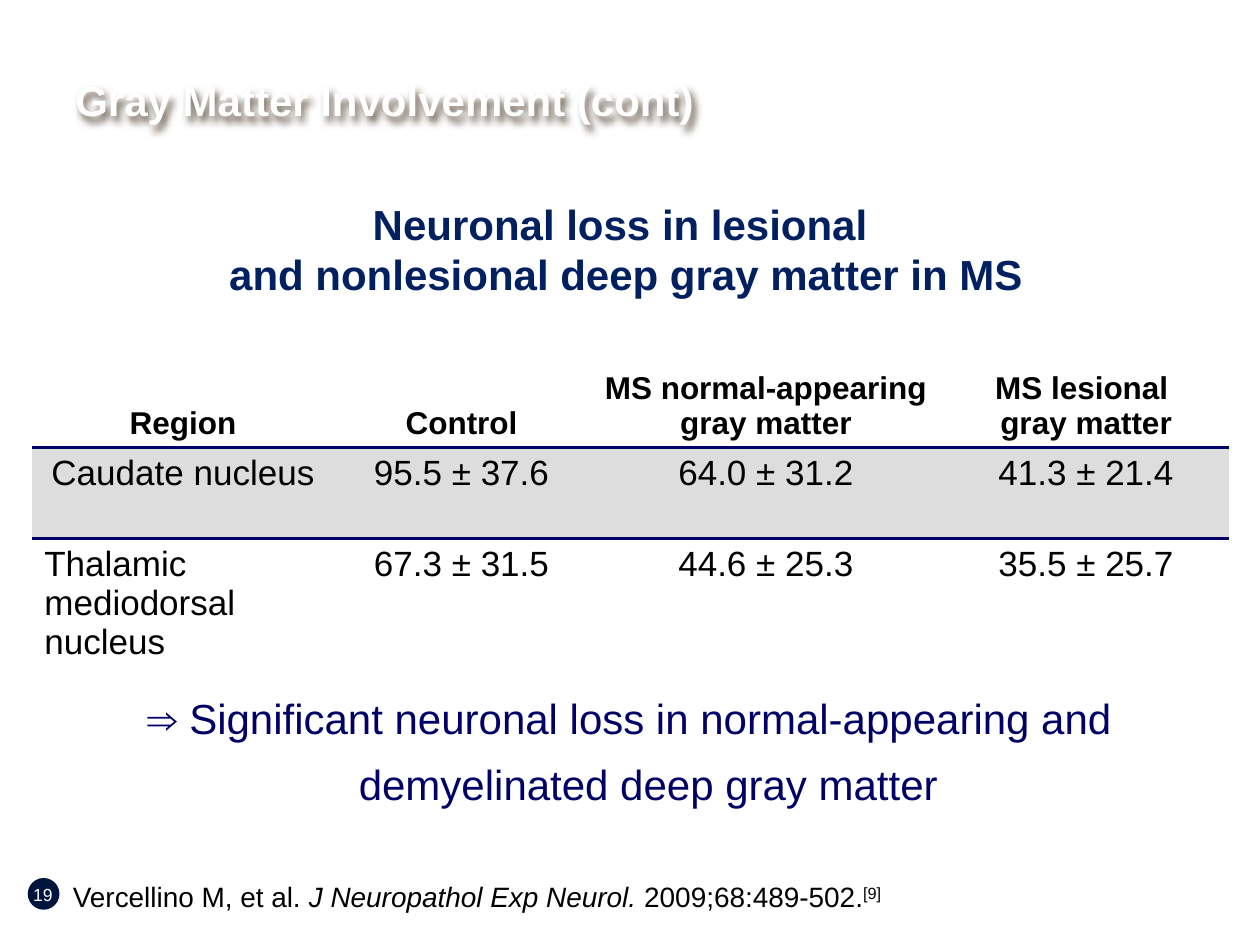
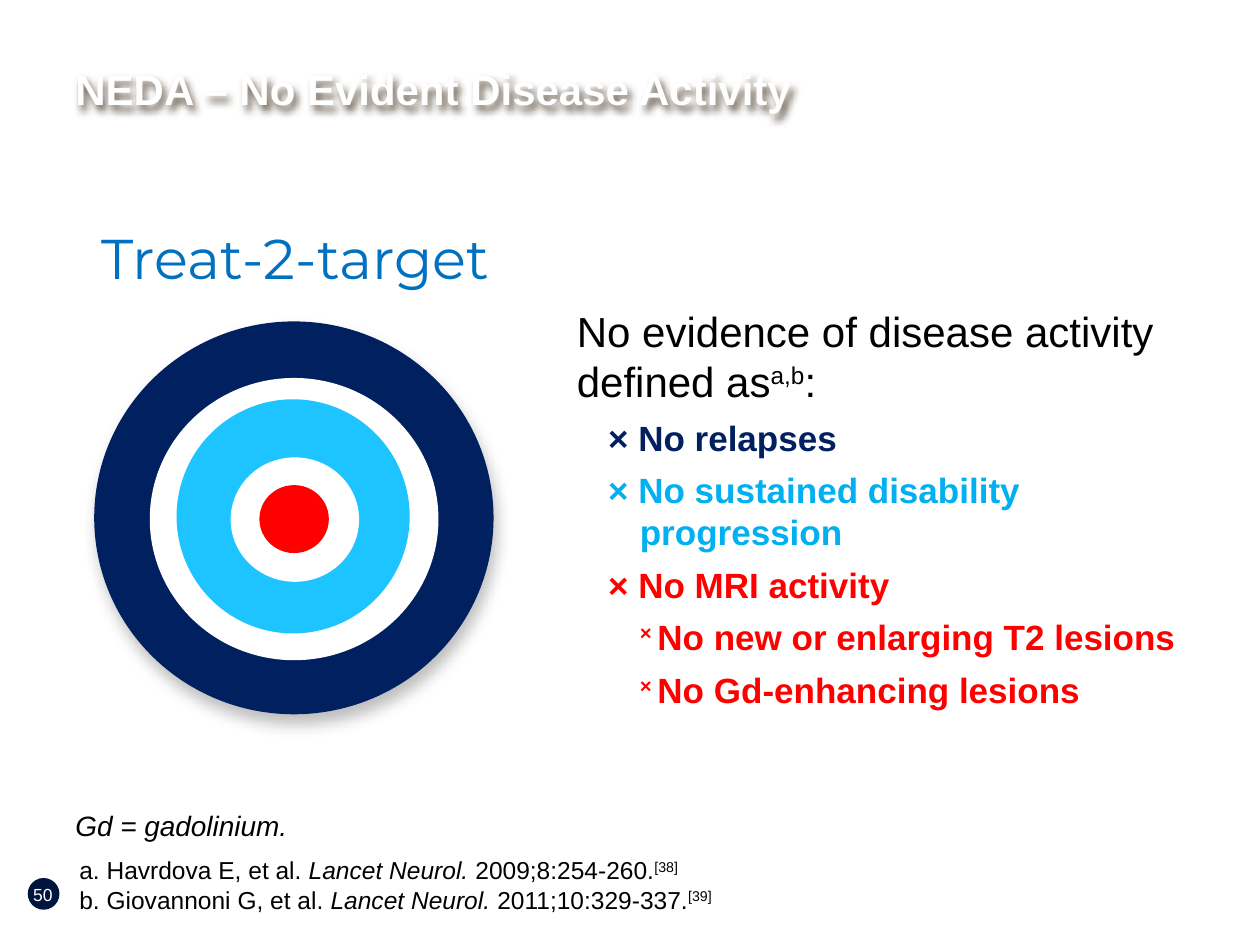
import pptx
import pptx.dml.color
import pptx.enum.shapes
import pptx.enum.text
import pptx.util
from lxml import etree
from pptx.oxml.ns import qn

Cm = pptx.util.Cm
Pt = pptx.util.Pt
ALIGN = pptx.enum.text.PP_ALIGN
ANCHOR = pptx.enum.text.MSO_ANCHOR
OVAL = pptx.enum.shapes.MSO_SHAPE.OVAL

COLORS = {
    "white": "FFFFFF",
    "black": "000000",
    "badge": "00153E",
    "navy": "002060",
    "rule": "000066",
    "band": "DDDDDD",
    "blue": "0070C0",
    "sky": "00B0F0",
    "ring": "1DC4FF",
    "red": "FF0000",
    "title shadow": "4A3A2A",
}
NO_STYLE_TABLE = "{2D5ABB26-0587-4C30-8999-92F81FD0307C}"

GRAY_MATTER = {
    "number": "19",
    "title": "Gray Matter Involvement (cont)",
    "title top": 0.43,
    "heading": "Neuronal loss in lesional \nand nonlesional deep gray matter in MS",
    "rows": [
        ["Region", "Control", "MS normal-appearing gray matter", "MS lesional \ngray matter"],
        ["Caudate nucleus", "95.5 ± 37.6", "64.0 ± 31.2", "41.3 ± 21.4"],
        ["Thalamic mediodorsal nucleus", "67.3 ± 31.5", "44.6 ± 25.3", "35.5 ± 25.7"],
    ],
    "column widths": [6.1, 5.13, 7.14, 5.77],
    "conclusion": "⇒ Significant neuronal loss in normal-appearing and demyelinated deep gray matter",
    "citation": [
        ("Vercellino M, et al. ", ""),
        ("J Neuropathol Exp Neurol. ", "italic"),
        ("2009;68:489-502.", ""),
        ("[9]", "superscript"),
    ],
}

NEDA = {
    "number": "50",
    "title": "NEDA – No Evident Disease Activity",
    "title top": 0.2,
    "heading": "Treat-2-target",
    "definition": [
        ("No evidence of disease activity defined as", ""),
        ("a,b", "superscript"),
        (":", ""),
    ],
    "criteria": [
        ("No relapses", "navy", 1),
        ("No sustained disability progression", "sky", 1),
        ("No MRI activity", "red", 1),
        ("No new or enlarging T2 lesions", "red", 2),
        ("No Gd-enhancing lesions", "red", 2),
    ],
    "rings": [
        ((1.9, 6.48, 8.05, 7.92), "navy"),
        ((3.02, 7.62, 5.82, 5.69), "white"),
        ((3.56, 8.05, 4.7, 4.72), "ring"),
        ((4.65, 9.22, 2.59, 2.51), "white"),
        ((5.23, 9.78, 1.4, 1.37), "red"),
    ],
    "abbreviation": "Gd = gadolinium.",
    "citations": [
        [
            ("a. Havrdova E, et al. ", ""),
            ("Lancet Neurol. ", "italic"),
            ("2009;8:254-260.", ""),
            ("[38]", "superscript"),
        ],
        [
            ("b. Giovannoni G, et al.", ""),
            (" Lancet Neurol. ", "italic"),
            ("2011;10:329-337.", ""),
            ("[39]", "superscript"),
        ],
    ],
}


def rgb(name):
    return pptx.dml.color.RGBColor.from_string(COLORS[name])


def place(box):
    return [Cm(length) for length in box]


def add_shadow(shape, color, alpha, blur, distance, angle):
    shape.shadow.inherit = False
    effects = shape._element.spPr.find(qn("a:effectLst"))
    shadow = etree.SubElement(
        effects, qn("a:outerShdw"), blurRad=str(Pt(blur)), dist=str(Pt(distance)),
        dir=str(angle * 60000), algn="ctr", rotWithShape="0")
    shade = etree.SubElement(shadow, qn("a:srgbClr"), val=COLORS[color])
    etree.SubElement(shade, qn("a:alpha"), val=str(alpha * 1000))


def write(paragraph, content, size, color="black", bold=False, align=ALIGN.LEFT,
          font="Arial"):
    if isinstance(content, str):
        paragraph.text = content
    else:
        for text, style in content:
            run = paragraph.add_run()
            run.text = text
            if style == "italic":
                run.font.italic = True
            elif style == "superscript":
                run._r.get_or_add_rPr().set("baseline", "30000")
    paragraph.alignment = align
    paragraph.font.name = font
    paragraph.font.size = Pt(size)
    paragraph.font.bold = bold
    paragraph.font.color.rgb = rgb(color)


def indent(paragraph, left, first=0):
    properties = paragraph._p.get_or_add_pPr()
    properties.set("marL", str(Cm(left)))
    properties.set("indent", str(Cm(first)))


def add_text_box(slide, box, anchor=ANCHOR.TOP, inset=True):
    shape = slide.shapes.add_textbox(*place(box))
    frame = shape.text_frame
    frame.word_wrap = True
    frame.vertical_anchor = anchor
    if not inset:
        frame.margin_left = frame.margin_right = 0
        frame.margin_top = frame.margin_bottom = 0
    return shape


def add_label(slide, box, content, size, anchor=ANCHOR.TOP, inset=True, **style):
    shape = add_text_box(slide, box, anchor, inset)
    write(shape.text_frame.paragraphs[0], content, size, **style)
    return shape


def add_oval(shapes, box, color):
    oval = shapes.add_shape(OVAL, *place(box))
    oval.fill.solid()
    oval.fill.fore_color.rgb = rgb(color)
    oval.line.fill.background()
    oval.shadow.inherit = False
    return oval


def add_base_slide(presentation, content):
    slide = presentation.slides.add_slide(presentation.slide_layouts[6])
    add_oval(slide.shapes, (0.56, 17.7, 0.64, 0.64), "badge")
    add_label(slide, (0.13, 17.53, 1.47, 1.02), content["number"], 10,
              anchor=ANCHOR.MIDDLE, color="white", align=ALIGN.CENTER)
    title = add_label(slide, (1.27, content["title top"], 19.69, 3.18), content["title"], 24,
                      anchor=ANCHOR.MIDDLE, color="white", bold=True)
    add_shadow(title, "title shadow", 80, 4, 3, 60)
    return slide


def add_rule(cell, side):
    line = etree.Element(qn("a:" + side), w=str(Pt(2.25)))
    fill = etree.SubElement(line, qn("a:solidFill"))
    etree.SubElement(fill, qn("a:srgbClr"), val=COLORS["rule"])
    cell._tc.get_or_add_tcPr().insert(0, line)


def add_neuron_table(slide, rows, widths):
    row_height = 1.83
    frame = slide.shapes.add_table(
        len(rows), len(widths),
        *place((0.64, 7.19, sum(widths), row_height * len(rows))))
    table = frame.table
    table._tbl.tblPr.find(qn("a:tableStyleId")).text = NO_STYLE_TABLE
    table.first_row = table.horz_banding = False
    for column, width in zip(table.columns, widths):
        column.width = Cm(width)
    for row_index, row in enumerate(rows):
        table.rows[row_index].height = Cm(row_height)
        header = row_index == 0
        for column_index, text in enumerate(row):
            cell = table.cell(row_index, column_index)
            wrapped_name = row_index == 2 and column_index == 0
            write(cell.text_frame.paragraphs[0], text, 18 if header else 20, bold=header,
                  align=ALIGN.LEFT if wrapped_name else ALIGN.CENTER)
            cell.vertical_anchor = ANCHOR.BOTTOM if header else ANCHOR.TOP
            if row_index == 1:
                cell.fill.solid()
                cell.fill.fore_color.rgb = rgb("band")
            else:
                cell.fill.background()
            if row_index < 2:
                add_rule(cell, "lnB" if header else "lnT")


def build_gray_matter(presentation):
    content = GRAY_MATTER
    slide = add_base_slide(presentation, content)
    add_label(slide, (1.47, 17.73, 20.32, 0.69), content["citation"], 16, inset=False)
    add_label(slide, (1.7, 3.91, 21.84, 2.24), content["heading"], 24,
              anchor=ANCHOR.BOTTOM, color="navy", bold=True, align=ALIGN.CENTER)
    add_neuron_table(slide, content["rows"], content["column widths"])
    conclusion = add_label(slide, (2.72, 13.54, 19.94, 3.68), content["conclusion"], 24,
                           color="rule", align=ALIGN.CENTER)
    paragraph = conclusion.text_frame.paragraphs[0]
    indent(paragraph, 0.76, -0.76)
    paragraph.line_spacing = 1.3


def build_neda(presentation):
    content = NEDA
    slide = add_base_slide(presentation, content)
    citations = add_text_box(slide, (1.35, 17.12, 20.88, 1.3)).text_frame
    for index, citation in enumerate(content["citations"]):
        paragraph = citations.add_paragraph() if index else citations.paragraphs[0]
        write(paragraph, citation, 14)

    heading = add_label(slide, (1.63, 4.65, 8.66, 1.22), content["heading"], 32, inset=False,
                        color="blue", align=ALIGN.CENTER, font="Montserrat")
    heading.text_frame.paragraphs[0].line_spacing = 0.9

    criteria = add_label(slide, (11.63, 6.15, 12.5, 8.26), content["definition"], 24,
                         inset=False).text_frame
    for text, color, level in content["criteria"]:
        paragraph = criteria.add_paragraph()
        if level == 1:
            indent(paragraph, 1.27, -0.64)
            write(paragraph, "× " + text, 20, color, bold=True)
        else:
            indent(paragraph, 1.27)
            write(paragraph, [("× ", "superscript"), (text, "")], 20, color, bold=True)
        paragraph.space_before = Pt(6)

    target = slide.shapes.add_group_shape()
    rings = [add_oval(target.shapes, box, color) for box, color in content["rings"]]
    add_shadow(rings[0], "black", 25, 9, 6, 70)

    abbreviation = add_label(slide, (1.27, 16.18, 5.5, 0.94), content["abbreviation"], 16)
    abbreviation.text_frame.paragraphs[0].font.italic = True


def main():
    presentation = pptx.Presentation()
    presentation.slide_width = Cm(25.4)
    presentation.slide_height = Cm(19.05)
    build_gray_matter(presentation)
    build_neda(presentation)
    presentation.save("out.pptx")


if __name__ == "__main__":
    main()
